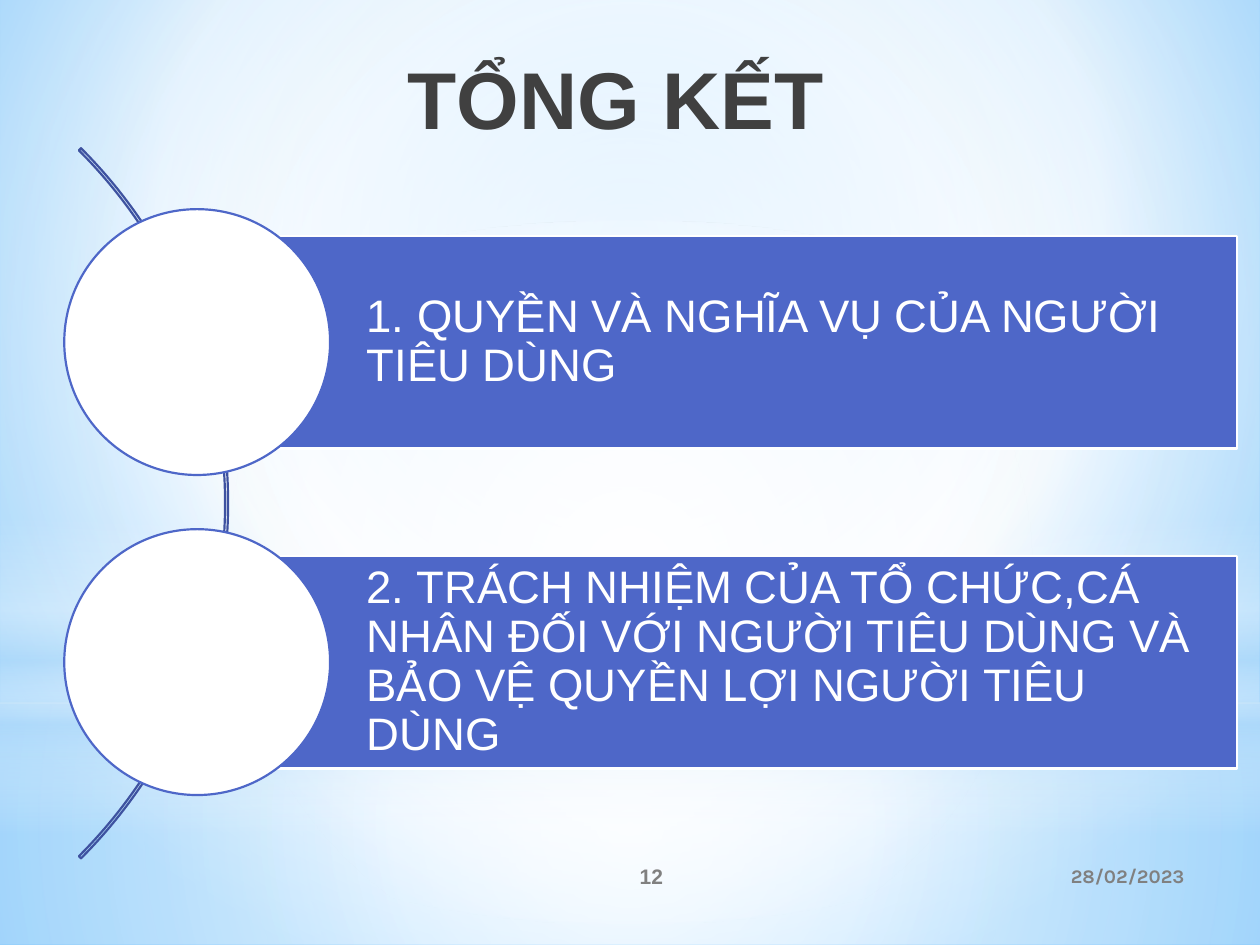
import pptx
import pptx.util
import pptx.oxml
import pptx.oxml.ns
import pptx.dml.color
import pptx.enum.shapes
import pptx.enum.text

Inches, Pt = pptx.util.Inches, pptx.util.Pt
RGB = pptx.dml.color.RGBColor.from_string
SHAPE = pptx.enum.shapes.MSO_SHAPE
ALIGN = pptx.enum.text.PP_ALIGN
ANCHOR = pptx.enum.text.MSO_ANCHOR
qn = pptx.oxml.ns.qn

COLORS = {
    "white": "FFFFFF", "sky": "B4DCFA", "light": "9ED5FF", "deep": "5BB9FF",
    "bar": "4E67C8", "arc": "3E52A0", "title": "404040", "footer": "808080",
}


def set_gradient(fill, owner, stops, focus=None):
    """Stops are (position, colour, opacity) in percent; focus is l, t, r, b.

    Without a focus the gradient runs from top to bottom.
    """
    fill.gradient()
    old = next(owner.iter(qn("a:gradFill")))
    stop_xml = "".join(
        f'<a:gs pos="{position * 1000}"><a:srgbClr val="{COLORS[color]}">'
        f'<a:alpha val="{opacity * 1000}"/></a:srgbClr></a:gs>'
        for position, color, opacity in stops)
    if focus:
        left, top, right, bottom = (side * 1000 for side in focus)
        direction = (f'<a:path path="circle"><a:fillToRect l="{left}" t="{top}" '
                     f'r="{right}" b="{bottom}"/></a:path>')
    else:
        direction = '<a:lin ang="5400000" scaled="0"/>'
    new = pptx.oxml.parse_xml(
        f'<a:gradFill {pptx.oxml.ns.nsdecls("a")} rotWithShape="1">'
        f'<a:gsLst>{stop_xml}</a:gsLst>{direction}</a:gradFill>')
    old.getparent().replace(old, new)


def add_outlined(kind, left, top, width, height, fill=None, line=None):
    shape = slide.shapes.add_shape(
        kind, Inches(left), Inches(top), Inches(width), Inches(height))
    shape.shadow.inherit = False
    if fill:
        shape.fill.solid()
        shape.fill.fore_color.rgb = RGB(COLORS[fill])
    else:
        shape.fill.background()
    if line:
        shape.line.color.rgb = RGB(COLORS[line])
        shape.line.width = Pt(1.25)
    else:
        shape.line.fill.background()
    return shape


prs = pptx.Presentation()
prs.slide_width, prs.slide_height = Inches(10), Inches(7.5)
slide = prs.slides.add_slide(prs.slide_layouts[6])

# Background and its soft light layers
set_gradient(slide.background.fill, slide._element,
             [(0, "light", 100), (60, "white", 100), (100, "deep", 100)],
             (20, 10, 20, 60))
center = (50, 50, 50, 50)
glows = [
    (SHAPE.RECTANGLE, 5.58, 1.92,
     [(0, "white", 91), (37, "white", 76), (100, "sky", 79)], center),
    (SHAPE.RECTANGLE, 0, 5.58,
     [(0, "white", 89), (48, "white", 62), (100, "sky", 79)], center),
    (SHAPE.RECTANGLE, 4.12, 2.5,
     [(0, "white", 0), (29, "white", 30), (45, "sky", 40), (55, "white", 26),
      (65, "sky", 60), (100, "white", 0)], None),
    (SHAPE.OVAL, 1.75, 5.58, [(0, "white", 100), (56, "white", 0)], center),
]
for kind, top, height, stops, focus in glows:
    glow = add_outlined(kind, 0, top, 10, height)
    set_gradient(glow.fill, glow._element, stops, focus)

# Title, date and page number
labels = [
    ("28/02/2023", 6.75, 6.75, 2.75, 0.4, 11, "Karla", "footer", ALIGN.RIGHT, ANCHOR.MIDDLE),
    ("12", 4.17, 6.75, 2, 0.4, 12, "Arial", "footer", ALIGN.CENTER, ANCHOR.MIDDLE),
    ("TỔNG KẾT", 1.3, 0.34, 7.17, 0.96, 46, "Arial", "title", ALIGN.CENTER, ANCHOR.TOP),
]
for text, left, top, width, height, size, font, color, align, anchor in labels:
    label = slide.shapes.add_textbox(
        Inches(left), Inches(top), Inches(width), Inches(height)).text_frame
    label.word_wrap = True
    label.vertical_anchor = anchor
    label.text = text
    paragraph = label.paragraphs[0]
    paragraph.alignment = align
    paragraph.font.size = Pt(size)
    paragraph.font.name = font
    paragraph.font.bold = True
    paragraph.font.color.rgb = RGB(COLORS[color])

# Arc with the two summary points
arc = add_outlined(SHAPE.BLOCK_ARC, -6.16, 0.01, 7.97, 7.97, line="arc")
for index, value in enumerate((189, 27, 0.003)):
    arc.adjustments[index] = value

points = [
    "1. QUYỀN VÀ NGHĨA VỤ CỦA NGƯỜI TIÊU DÙNG",
    "2. TRÁCH NHIỆM CỦA TỔ CHỨC,CÁ NHÂN ĐỐI VỚI NGƯỜI TIÊU DÙNG VÀ "
    "BẢO VỆ QUYỀN LỢI NGƯỜI TIÊU DÙNG",
]
bar_height, circle_size, pitch = 1.69, 2.11, 2.54
for index, point in enumerate(points):
    circle_top = 1.66 + index * pitch
    bar_top = circle_top + (circle_size - bar_height) / 2
    bar = add_outlined(SHAPE.RECTANGLE, 1.57, bar_top, 8.25, bar_height, "bar", "white")
    frame = bar.text_frame
    frame.word_wrap = True
    frame.vertical_anchor = ANCHOR.MIDDLE
    frame.margin_left = Inches(1.34)
    frame.margin_top = frame.margin_right = frame.margin_bottom = Inches(0.07)
    frame.text = point
    paragraph = frame.paragraphs[0]
    paragraph.alignment = ALIGN.LEFT
    paragraph.line_spacing = 0.9
    paragraph.font.size = Pt(26)
    paragraph.font.name = "Arial"
    paragraph.font.color.rgb = RGB(COLORS["white"])
    add_outlined(SHAPE.OVAL, 0.51, circle_top, circle_size, circle_size, "white", "bar")

prs.save("out.pptx")
